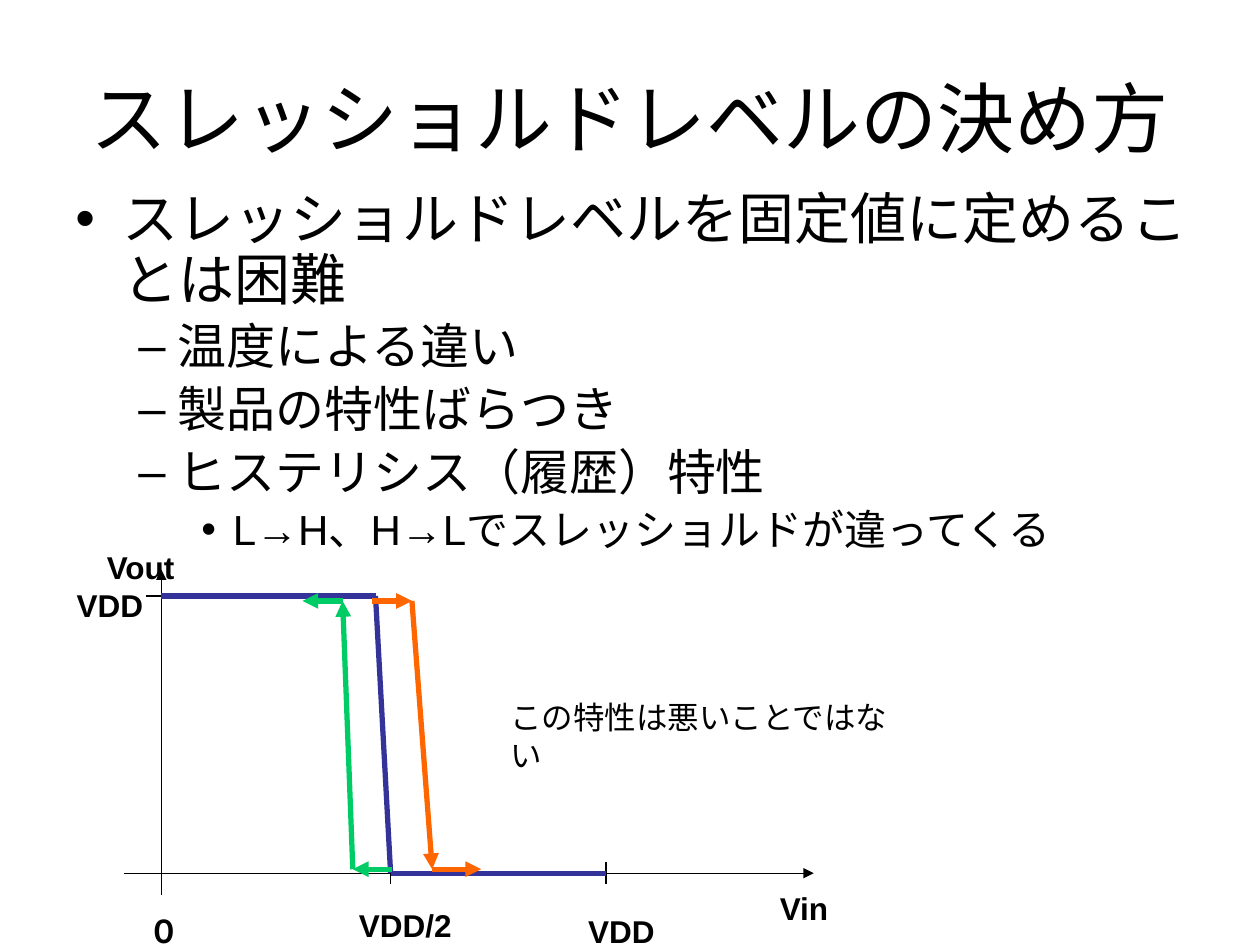
"""Build a slide on choosing a threshold level, with a hysteresis diagram."""
from dataclasses import dataclass
from itertools import pairwise

from lxml import etree
from pptx import Presentation
from pptx.dml.color import RGBColor
from pptx.enum.shapes import MSO_CONNECTOR
from pptx.enum.text import MSO_ANCHOR, MSO_AUTO_SIZE, PP_ALIGN
from pptx.oxml.ns import qn
from pptx.slide import Slide
from pptx.text.text import TextFrame, _Paragraph
from pptx.util import Pt

STRAIGHT = MSO_CONNECTOR.STRAIGHT
TOP, MIDDLE = MSO_ANCHOR.TOP, MSO_ANCHOR.MIDDLE
LEFT, CENTER = PP_ALIGN.LEFT, PP_ALIGN.CENTER
GROW, FIXED = MSO_AUTO_SIZE.SHAPE_TO_FIT_TEXT, MSO_AUTO_SIZE.NONE


@dataclass(frozen=True)
class Theme:
    font: str = "Arial"
    ink: str = "000000"
    curve: str = "333399"
    rise: str = "FF6600"
    fall: str = "00CC66"
    title: float = 44
    label: float = 18
    thin: float = 0.75
    thick: float = 3


@dataclass(frozen=True)
class Level:
    size: float
    margin: float
    hang: float
    mark: str


@dataclass(frozen=True)
class Label:
    text: str
    left: float
    top: float
    width: float
    bold: bool = True
    wrap: bool = False


@dataclass(frozen=True)
class Path:
    points: tuple[tuple[float, float], ...]
    color: str
    weight: float
    arrow: bool = False


THEME = Theme()
LEVELS = (
    Level(32, 27, 27, "•"),
    Level(28, 58.5, 22.5, "–"),
    Level(24, 90, 18, "•"),
)
POINTS = (
    (0, "スレッショルドレベルを固定値に定めることは困難"),
    (1, "温度による違い"),
    (1, "製品の特性ばらつき"),
    (1, "ヒステリシス（履歴）特性"),
    (2, "L→H、H→Lでスレッショルドが違ってくる"),
)
HIGH, BASE = 340.6, 499
UPPER, LOWER = HIGH + 2.8, BASE - 2.3
ZERO, HALF, FULL = 92.2, 223.2, 346.3
TICK = 6.2
PATHS = (
    Path(((70.6, BASE), (465, BASE)), THEME.ink, THEME.thin, True),
    Path(((ZERO, 511.2), (ZERO, 325.4)), THEME.ink, THEME.thin, True),
    Path(((83.5, HIGH), (96.5, HIGH)), THEME.ink, THEME.thin),
    *(Path(((x, BASE - TICK), (x, BASE + TICK)), THEME.ink, THEME.thin)
      for x in (HALF, FULL)),
    Path(((ZERO, HIGH), (214.6, HIGH), (HALF, BASE), (FULL, BASE)),
         THEME.curve, THEME.thick),
    Path(((212.4, UPPER), (235.4, UPPER), (247, LOWER), (275, LOWER)),
         THEME.rise, THEME.thick, True),
    Path(((223.9, LOWER), (201.6, LOWER), (195.8, UPPER), (172.8, UPPER)),
         THEME.fall, THEME.thick, True),
)
LABELS = (
    Label("０V", 77.8, 517.7, 38.9, wrap=True),
    Label("VDD", 329, 517.7, 52.6),
    Label("VDD", 36.7, 331.2, 52.6),
    Label("Vin", 438.5, 504.7, 42.5),
    Label("Vout", 54, 309.6, 54.7),
    Label("VDD/2", 198, 514.1, 67.7),
    Label("この特性は悪いことではない", 284.4, 395.3, 234, bold=False, wrap=True),
)


def add_run(para: _Paragraph, text: str, size: float, bold: bool = False) -> None:
    """Add one styled run to a paragraph."""
    run = para.add_run()
    run.text = text
    font = run.font
    font.name, font.size, font.bold = THEME.font, Pt(size), bold
    font.color.rgb = RGBColor.from_string(THEME.ink)


def add_box(slide: Slide, left: float, top: float, width: float, height: float,
            wrap: bool = True, fit: MSO_AUTO_SIZE = FIXED) -> TextFrame:
    """Add an empty text box and return its frame."""
    box = slide.shapes.add_textbox(Pt(left), Pt(top), Pt(width), Pt(height))
    frame = box.text_frame
    frame.word_wrap, frame.auto_size = wrap, fit
    frame.vertical_anchor = TOP
    return frame


def add_title(slide: Slide, text: str) -> None:
    """Add the centred title."""
    frame = add_box(slide, 36, 21.6, 648, 90)
    frame.vertical_anchor = MIDDLE
    para = frame.paragraphs[0]
    para.alignment = CENTER
    add_run(para, text, THEME.title)


def add_body(slide: Slide) -> None:
    """Add the bulleted list."""
    frame = add_box(slide, 36, 105.8, 653, 223.2)
    for index, (depth, text) in enumerate(POINTS):
        para = frame.add_paragraph() if index else frame.paragraphs[0]
        level = LEVELS[depth]
        para.level, para.alignment = depth, LEFT
        para.line_spacing = 0.9
        para.space_before = Pt(level.size * 0.2)
        props = para._p.get_or_add_pPr()
        props.set("marL", str(Pt(level.margin)))
        props.set("indent", str(-Pt(level.hang)))
        etree.SubElement(props, qn("a:buFont"), typeface=THEME.font)
        etree.SubElement(props, qn("a:buChar"), char=level.mark)
        add_run(para, text, level.size)


def add_path(slide: Slide, path: Path) -> None:
    """Draw a path as straight connectors."""
    for start, end in pairwise(path.points):
        line = slide.shapes.add_connector(
            STRAIGHT, *(Pt(value) for value in (*start, *end)))
        line.line.color.rgb = RGBColor.from_string(path.color)
        line.line.width = Pt(path.weight)
        if path.arrow:
            etree.SubElement(line.line._get_or_add_ln(), qn("a:tailEnd"),
                             type="triangle")
        etree.SubElement(line._element.spPr, qn("a:effectLst"))


def add_label(slide: Slide, label: Label) -> None:
    """Add one diagram label."""
    frame = add_box(slide, label.left, label.top, label.width, 28.8,
                    label.wrap, GROW)
    add_run(frame.paragraphs[0], label.text, THEME.label, label.bold)


def main() -> None:
    """Build and save the slide."""
    deck = Presentation()
    deck.slide_width, deck.slide_height = Pt(720), Pt(540)
    slide = deck.slides.add_slide(deck.slide_layouts[6])
    add_title(slide, "スレッショルドレベルの決め方")
    add_body(slide)
    for path in PATHS:
        add_path(slide, path)
    for label in LABELS:
        add_label(slide, label)
    deck.save("out.pptx")


if __name__ == "__main__":
    main()
